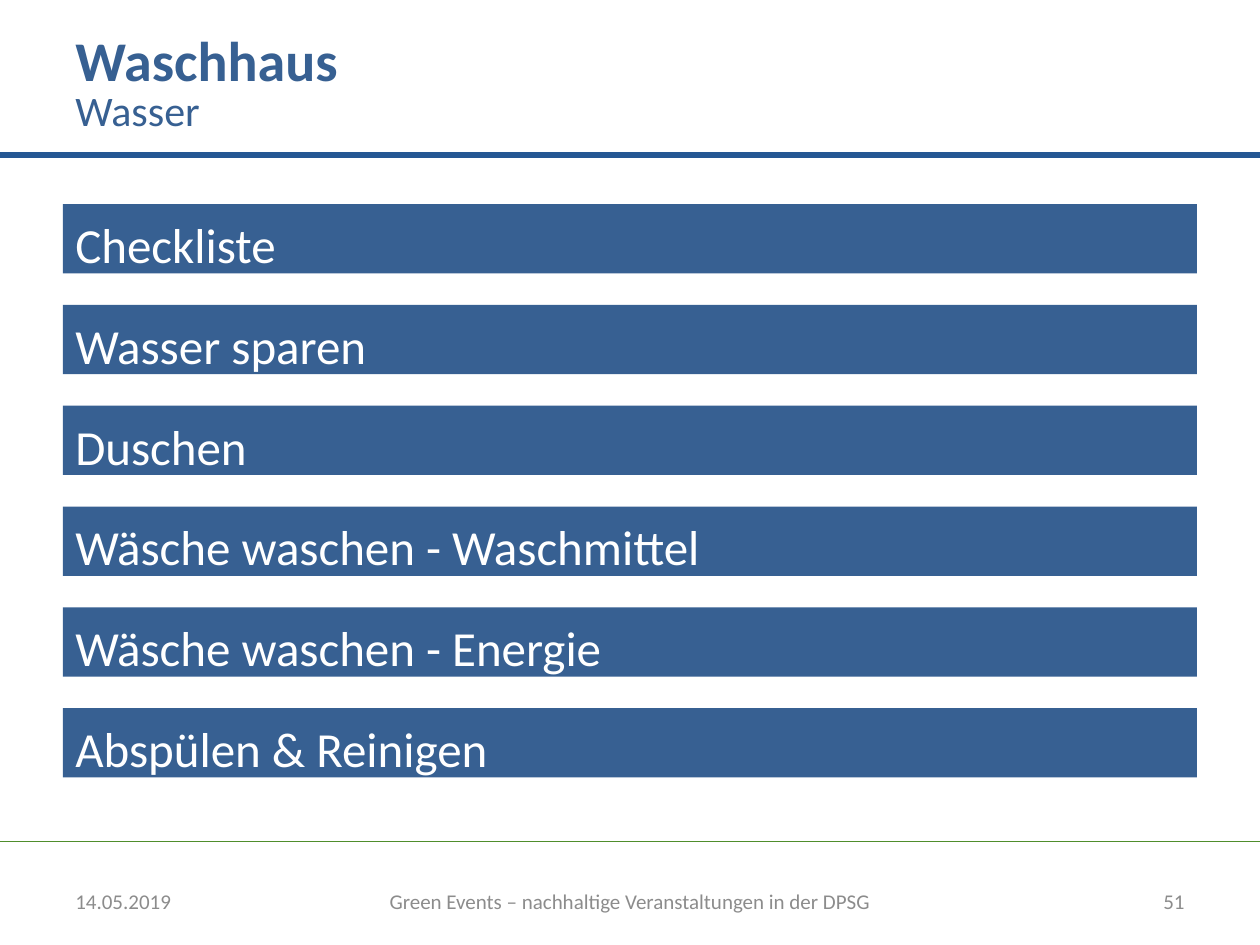
from typing import NamedTuple

from lxml import etree
from pptx import Presentation, util as u
from pptx.dml.color import RGBColor
from pptx.enum import shapes, text
from pptx.oxml.ns import qn

WIDTH, HEIGHT = 10, 7.5
MARGIN = 0.05 * WIDTH
CONTENT_WIDTH = WIDTH - 2 * MARGIN
COLORS = {
    "blue": "376092",
    "header_rule": "255793",
    "footer_rule": "4F8D2C",
    "gray": "8C8C8C",
    "white": "FFFFFF",
}
FONT = "Calibri"
ALIGN = text.PP_ALIGN

# Topic bars: one column, equal row pitch
BAR_TOP, BAR_HEIGHT, BAR_PITCH = 1.62, 0.55, 0.8
TOPICS = [
    "Checkliste",
    "Wasser sparen",
    "Duschen",
    "Wäsche waschen - Waschmittel",
    "Wäsche waschen - Energie",
    "Abspülen & Reinigen",
]


class Box(NamedTuple):
    left: float
    top: float
    width: float
    height: float

    def emu(self) -> list[int]:
        return [u.Inches(value) for value in self]


class Rule(NamedTuple):
    top: float
    end: float
    color: str
    weight: float


class Label(NamedTuple):
    words: str
    box: Box
    size: int
    color: str
    bold: bool = False
    align: ALIGN = ALIGN.LEFT
    inset_top: float = 0.05
    inset_bottom: float = 0.05


FOOTER_TOP, FOOTER_HEIGHT, FOOTER_SIDE = 6.95, 0.4, 2.33
RULES = [
    Rule(6.68, WIDTH, "footer_rule", 0.75),
    Rule(1.23, 10.12, "header_rule", 3),
]
LABELS = [
    # Heading
    Label("Waschhaus", Box(MARGIN, 0.01, WIDTH * 2 / 3, 0.82), 32, "blue",
          bold=True, inset_top=0.1, inset_bottom=0.01),
    Label("Wasser", Box(MARGIN, 0.6, WIDTH * 2 / 3, 0.47), 24, "blue",
          inset_top=0.07, inset_bottom=0),
    # Footer
    Label("14.05.2019", Box(MARGIN, FOOTER_TOP, FOOTER_SIDE, FOOTER_HEIGHT),
          12, "gray"),
    Label("Green Events – nachhaltige Veranstaltungen in der DPSG",
          Box(2.99, FOOTER_TOP, 4.02, FOOTER_HEIGHT), 12, "gray",
          align=ALIGN.CENTER),
    Label("51", Box(WIDTH - MARGIN - FOOTER_SIDE, FOOTER_TOP, FOOTER_SIDE,
                    FOOTER_HEIGHT), 12, "gray", align=ALIGN.RIGHT),
]


def rgb(name: str) -> RGBColor:
    return RGBColor.from_string(COLORS[name])


def write(shape, words: str, *, size: int, color: str, bold: bool = False,
          align: ALIGN = ALIGN.LEFT, inset_top: float = 0.05,
          inset_bottom: float = 0.05) -> None:
    frame = shape.text_frame
    frame.word_wrap = True
    frame.vertical_anchor = text.MSO_ANCHOR.MIDDLE
    frame.margin_top = u.Inches(inset_top)
    frame.margin_bottom = u.Inches(inset_bottom)
    paragraph = frame.paragraphs[0]
    paragraph.alignment = align
    run = paragraph.add_run()
    run.text = words
    run.font.name = FONT
    run.font.size = u.Pt(size)
    run.font.bold = bold
    run.font.color.rgb = rgb(color)


def draw_rule(slide, rule: Rule) -> None:
    line = slide.shapes.add_connector(
        shapes.MSO_CONNECTOR.STRAIGHT, 0, u.Inches(rule.top),
        u.Inches(rule.end), u.Inches(rule.top))
    line.line.color.rgb = rgb(rule.color)
    line.line.width = u.Pt(rule.weight)
    etree.SubElement(line._element.spPr, qn("a:effectLst"))


def draw_bar(slide, row: int, topic: str) -> None:
    box = Box(MARGIN, BAR_TOP + row * BAR_PITCH, CONTENT_WIDTH, BAR_HEIGHT)
    bar = slide.shapes.add_shape(shapes.MSO_SHAPE.RECTANGLE, *box.emu())
    bar.shadow.inherit = False
    bar.fill.solid()
    bar.fill.fore_color.rgb = rgb("blue")
    bar.line.fill.background()
    write(bar, topic, size=28, color="white", inset_top=0.08, inset_bottom=0)


def draw_label(slide, label: Label) -> None:
    words, box, *_ = label
    write(slide.shapes.add_textbox(*box.emu()), words, size=label.size,
          color=label.color, bold=label.bold, align=label.align,
          inset_top=label.inset_top, inset_bottom=label.inset_bottom)


def main() -> None:
    deck = Presentation()
    deck.slide_width, deck.slide_height = u.Inches(WIDTH), u.Inches(HEIGHT)
    slide = deck.slides.add_slide(deck.slide_layouts[6])
    for rule in RULES:
        draw_rule(slide, rule)
    for row, topic in enumerate(TOPICS):
        draw_bar(slide, row, topic)
    for label in LABELS:
        draw_label(slide, label)
    deck.save("out.pptx")


if __name__ == "__main__":
    main()
